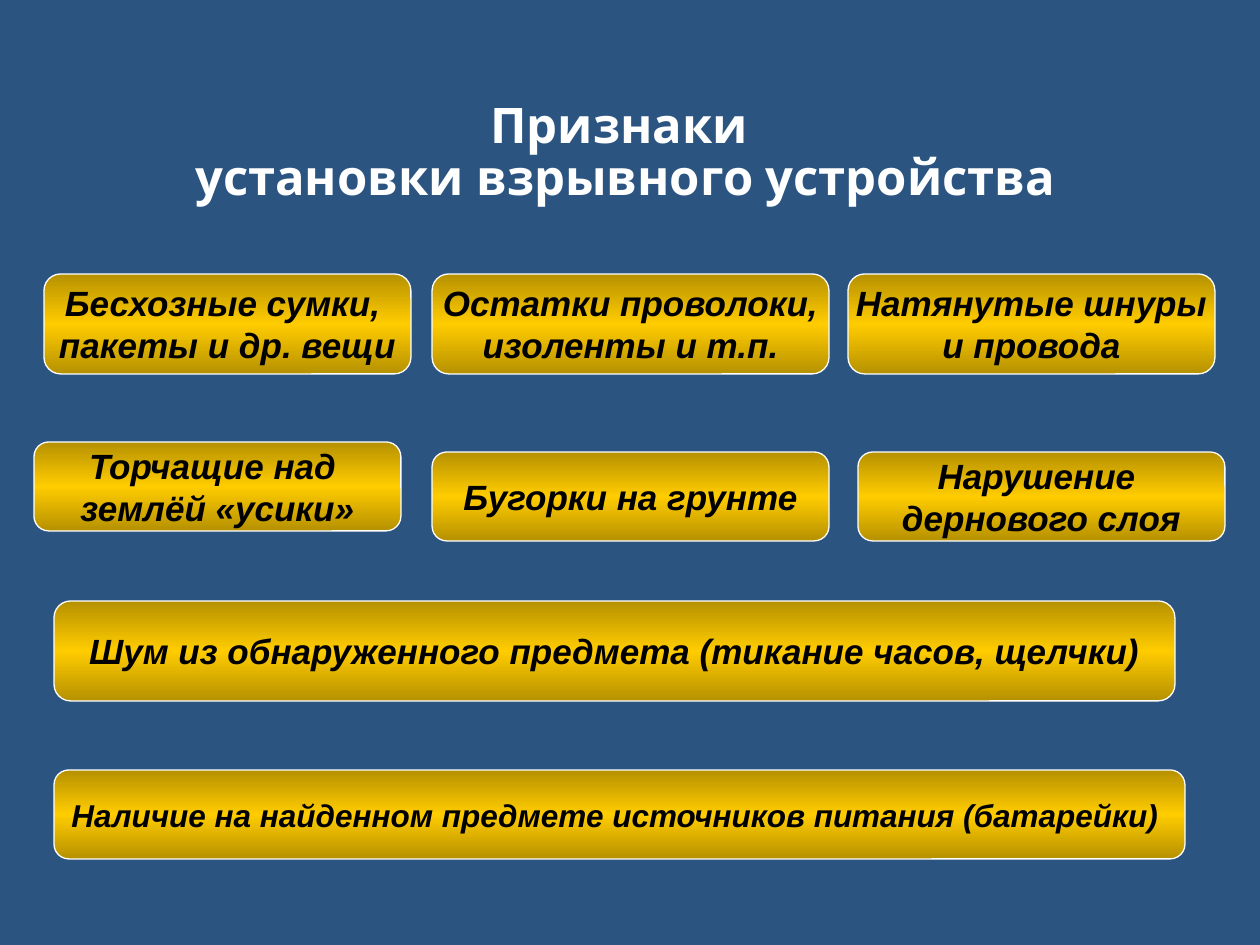
from dataclasses import dataclass

from pptx import Presentation
from pptx.dml.color import RGBColor
from pptx.enum.shapes import MSO_SHAPE
from pptx.enum.text import MSO_ANCHOR, MSO_AUTO_SIZE, PP_ALIGN
from pptx.oxml import parse_xml
from pptx.oxml.ns import nsdecls
from pptx.util import Pt

TITLE = ["Признаки", " установки взрывного устройства"]
TITLE_BOX = (113, 96, 1012, 208)

NARROW, MIDDLE = 367, 397
TALL, LOW = 100, 89
SIGNS = [
    (["Бесхозные сумки, ", "пакеты и др. вещи"], (44, 274, NARROW, TALL)),
    (["Остатки проволоки,", "изоленты и т.п."], (432, 274, MIDDLE, TALL)),
    (["Натянутые шнуры", "и провода"], (848, 274, NARROW, TALL)),
    (["Торчащие над ", "землёй «усики»"], (34, 442, NARROW, LOW)),
    (["Бугорки на грунте"], (432, 452, MIDDLE, LOW)),
    (["Нарушение ", "дернового слоя"], (858, 452, NARROW, LOW)),
    (["Шум из обнаруженного предмета (тикание часов, щелчки)"],
     (54, 601, 1121, TALL)),
]
POWER_SIGN = (["Наличие на найденном предмете источников питания (батарейки) "],
              (54, 770, 1131, LOW))


@dataclass(frozen=True)
class Theme:
    background: str = "2B5481"
    white: str = "FFFFFF"
    black: str = "000000"
    gold: str = "FFCC00"
    edge_shade: int = 46275
    title_font: str = "Karla"
    sign_font: str = "Arial"
    title_size: int = 28
    sign_size: int = 20
    small_size: int = 18


THEME = Theme()


def px(n):
    return round(n * 914400 / 126)


def rgb(value):
    return RGBColor.from_string(value)


def place(sp, box):
    sp.left, sp.top, sp.width, sp.height = map(px, box)


def write(tf, lines, font, size, color, italic=False, spacing=None):
    tf.text = "\n".join(lines)
    for p in tf.paragraphs:
        p.alignment = PP_ALIGN.CENTER
        p.line_spacing = spacing
        p.font.name = font
        p.font.size = Pt(size)
        p.font.bold = True
        p.font.italic = italic
        p.font.color.rgb = rgb(color)


def fill_gold(sp):
    sp.fill.gradient()
    sp.fill.gradient_angle = 270
    shade = f'<a:shade val="{THEME.edge_shade}"/>'
    stops = "".join(
        f'<a:gs pos="{pos}"><a:srgbClr val="{THEME.gold}">{mod}</a:srgbClr></a:gs>'
        for pos, mod in [(0, shade), (50000, ""), (100000, shade)])
    old = sp.element.spPr.find(".//{*}gsLst")
    old.getparent().replace(
        old, parse_xml(f'<a:gsLst {nsdecls("a")}>{stops}</a:gsLst>'))


def add_sign(s, lines, box, size):
    sp = s.shapes.add_shape(MSO_SHAPE.ROUNDED_RECTANGLE, *map(px, box))
    sp.shadow.inherit = False
    fill_gold(sp)
    sp.line.color.rgb = rgb(THEME.white)
    sp.line.width = Pt(0.75)
    tf = sp.text_frame
    tf.word_wrap = False
    tf.vertical_anchor = MSO_ANCHOR.MIDDLE
    write(tf, lines, THEME.sign_font, size, THEME.black, italic=True)


def main():
    prs = Presentation()
    prs.slide_width, prs.slide_height = px(1260), px(945)
    s = prs.slides.add_slide(prs.slide_layouts[5])
    s.background.fill.solid()
    s.background.fill.fore_color.rgb = rgb(THEME.background)

    title = s.shapes.title
    place(title, TITLE_BOX)
    title.text_frame.vertical_anchor = MSO_ANCHOR.TOP
    title.text_frame.auto_size = MSO_AUTO_SIZE.NONE
    write(title.text_frame, TITLE, THEME.title_font, THEME.title_size,
          THEME.white, spacing=0.88)

    for lines, box in SIGNS:
        add_sign(s, lines, box, THEME.sign_size)
    add_sign(s, *POWER_SIGN, THEME.small_size)
    prs.save("out.pptx")


if __name__ == "__main__":
    main()
